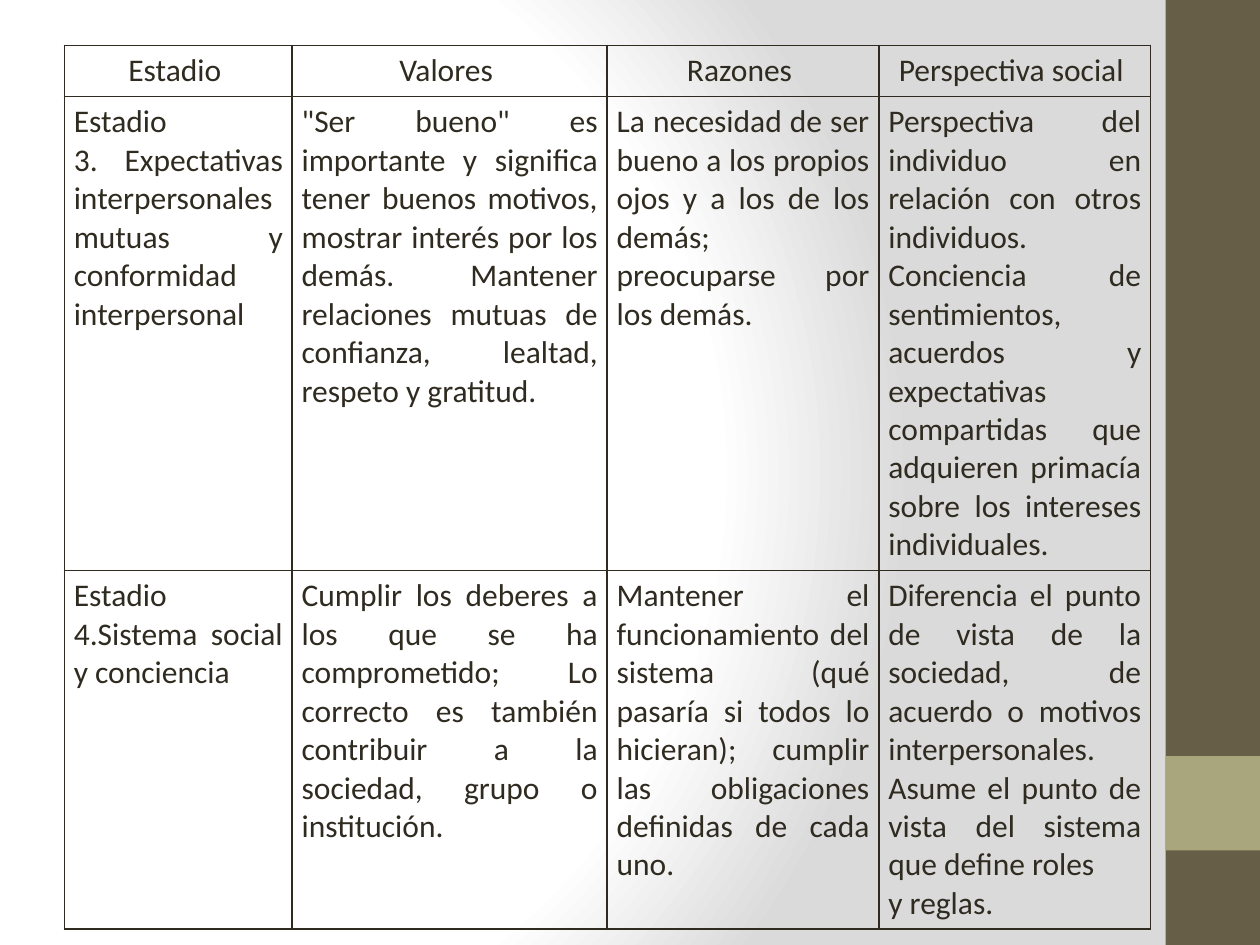
from dataclasses import dataclass

from pptx import Presentation
from pptx.dml.color import RGBColor
from pptx.enum.shapes import MSO_SHAPE
from pptx.enum.text import PP_ALIGN
from pptx.oxml import parse_xml
from pptx.oxml.ns import nsdecls, qn
from pptx.util import Pt


@dataclass(frozen=True)
class Theme:
    font: str = "Calibri"
    size: int = 18
    text: str = "2F2B20"
    band: str = "675E47"
    accent: str = "A9A57C"
    light: str = "FFFFFF"
    shade: str = "DADADA"
    border: int = 1


class SlideBuilder:
    def __init__(self, slide, theme):
        self.s = slide
        self.theme = theme

    def background(self):
        """Circular gradient centred left of the middle."""
        t = self.theme
        self.s.background.fill.solid()
        bg = self.s.element.find(".//" + qn("p:bgPr"))
        stops = "".join(
            f'<a:gs pos="{pos * 1000}"><a:srgbClr val="{color}"/></a:gs>'
            for pos, color in ((0, t.light), (75, t.light), (100, t.shade)))
        bg.replace(bg.find(qn("a:solidFill")), parse_xml(
            f'<a:gradFill {nsdecls("a")} rotWithShape="1"><a:gsLst>{stops}</a:gsLst>'
            '<a:path path="circle"><a:fillToRect l="20000" t="50000" r="100000" b="50000"/>'
            '</a:path></a:gradFill>'))

    def rect(self, left, top, width, height, color):
        sp = self.s.shapes.add_shape(
            MSO_SHAPE.RECTANGLE, Pt(left), Pt(top), Pt(width), Pt(height))
        sp.shadow.inherit = False
        sp.fill.solid()
        sp.fill.fore_color.rgb = RGBColor.from_string(color)
        sp.line.fill.background()

    def table(self, left, top, widths, heights, rows):
        table = self.s.shapes.add_table(
            len(rows), len(widths), Pt(left), Pt(top),
            Pt(sum(widths)), Pt(sum(heights))).table
        table.first_row = table.horz_banding = False
        for column, width in zip(table.columns, widths):
            column.width = Pt(width)
        for i, (row, height) in enumerate(zip(rows, heights)):
            table.rows[i].height = Pt(height)
            align = PP_ALIGN.JUSTIFY if i else PP_ALIGN.CENTER
            for j, text in enumerate(row):
                self.cell(table.cell(i, j), text, align)

    def cell(self, cell, text, align):
        t = self.theme
        cell.fill.background()
        cell.margin_left = cell.margin_right = Pt(5.4)
        cell.margin_top = cell.margin_bottom = Pt(3.6)
        cell.text = text
        for p in cell.text_frame.paragraphs:
            p.alignment = align
            p.font.name = t.font
            p.font.size = Pt(t.size)
            p.font.color.rgb = RGBColor.from_string(t.text)
        tc_pr = cell._tc.get_or_add_tcPr()
        for i, side in enumerate("LRTB"):
            tc_pr.insert(i, parse_xml(
                f'<a:ln{side} {nsdecls("a")} w="{Pt(t.border)}"><a:solidFill>'
                f'<a:srgbClr val="{t.text}"/></a:solidFill></a:ln{side}>'))


ROWS = [
    ("Estadio ", "Valores ", "Razones ", "Perspectiva social "),
    (
        "Estadio \n3. Expectativas interpersonales\nmutuas y conformidad interpersonal",
        '"Ser bueno" es importante y significa tener buenos motivos, mostrar interés '
        "por los demás. Mantener relaciones mutuas de confianza, lealtad, respeto y "
        "gratitud.",
        "La necesidad de ser bueno a los propios ojos y a los de los demás; "
        "preocuparse por los demás.",
        "Perspectiva del individuo en relación con otros individuos. Conciencia de "
        "sentimientos, acuerdos y expectativas compartidas que adquieren primacía "
        "sobre los intereses individuales.",
    ),
    (
        "Estadio \n4.Sistema social y conciencia ",
        "Cumplir los deberes a los que se ha comprometido; Lo correcto es también "
        "contribuir a la sociedad, grupo o institución.",
        "Mantener el funcionamiento del sistema (qué pasaría si todos lo hicieran); "
        "cumplir las obligaciones definidas de cada uno.",
        "Diferencia el punto de vista de la sociedad, de acuerdo o motivos "
        "interpersonales. Asume el punto de vista del sistema que define roles\n"
        "y reglas. ",
    ),
]


def main():
    prs = Presentation()
    prs.slide_width, prs.slide_height = Pt(720), Pt(540)
    theme = Theme()
    b = SlideBuilder(prs.slides.add_slide(prs.slide_layouts[6]), theme)

    # Background and side band
    b.background()
    b.rect(666, 0, 54, 540, theme.band)
    b.rect(666, 432, 54, 54, theme.accent)

    # Table of moral stages
    b.table(36.8, 26, (130.2, 180, 155.3, 155.3), (29.2, 270.8, 204.6), ROWS)

    prs.save("out.pptx")


if __name__ == "__main__":
    main()
